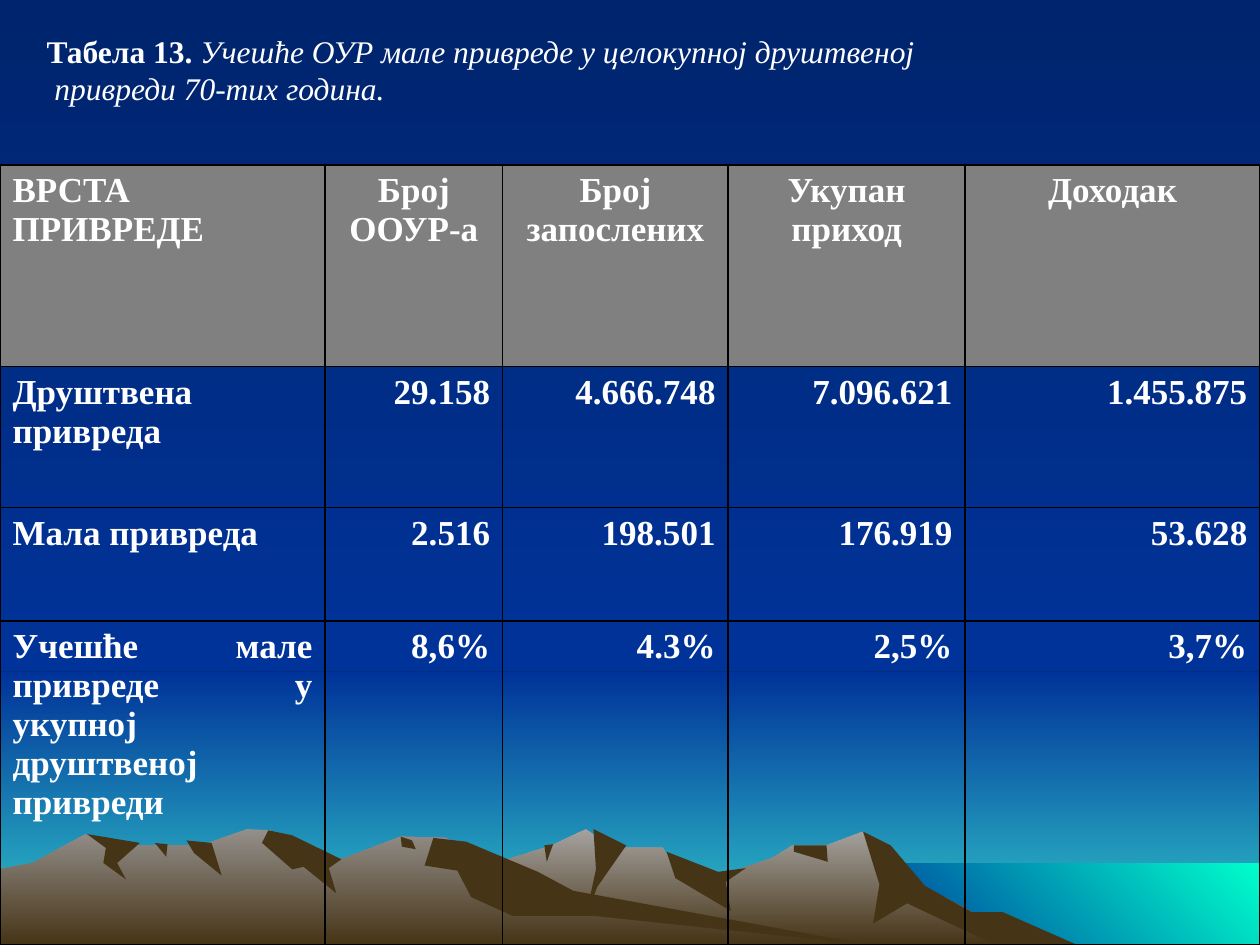
import pptx
import pptx.util
import pptx.oxml
import pptx.oxml.ns
from pptx.dml.color import RGBColor
from pptx.enum.shapes import MSO_SHAPE
from pptx.enum.text import MSO_ANCHOR, MSO_AUTO_SIZE, PP_ALIGN

Inches, Pt = pptx.util.Inches, pptx.util.Pt

FONT = "Times New Roman"
COLORS = {
    "night": "001847", "dusk": "00246D", "blue": "003399", "horizon": "33CCCC",
    "water": "00FFCC", "haze": "A5A29F", "stone": "938F8B", "earth": "463416",
    "text": "FFFFFF", "header": "808080", "border": "000000",
}

# Each paragraph is a list of (text, bold, italic)
TITLE = [
    [("Табела 13. ", True, False),
     ("Учешће ОУР мале привреде у целокупној друштвеној", False, True)],
    [(" привреди 70-тих година.", False, True)],
]
TABLE = [
    ["ВРСТА ПРИВРЕДЕ", "Број ООУР-а", "Број запослених", "Укупан приход", "Доходак"],
    ["Друштвена привреда", "29.158", "4.666.748", "7.096.621", "1.455.875"],
    ["Мала привреда", "2.516", "198.501", "176.919", "53.628"],
    ["Учешће мале привреде у укупној друштвеној привреди", "8,6%", "4.3%", "2,5%", "3,7%"],
]
COL_WIDTHS = [2.58, 1.41, 1.79, 1.88, 2.34]
ROW_HEIGHTS = [1.6, 1.12, 0.9, 2.57]

WIDTH, HEIGHT = 10, 7.5
SKYLINE = 5.33
SHORE = (6.83, 6.85)

# Ridges run left to right and are closed along the bottom of the slide
RIGHT_RIDGE = [
    (2.58, 7.5), (3.27, 7.09), (3.94, 6.85), (4.38, 6.71), (4.65, 6.58), (4.86, 6.73),
    (5.26, 6.73), (5.36, 6.9), (5.66, 6.97), (6.13, 6.81), (6.29, 6.71), (6.56, 6.71),
    (6.85, 6.6), (7.23, 6.98), (8.2, 7.5)]
LEFT_RIDGE = [
    (0, 6.9), (0.26, 6.85), (0.68, 6.62), (0.94, 6.71), (1.6, 6.71), (1.96, 6.58),
    (2.15, 6.59), (2.36, 6.81), (2.71, 6.82), (3.18, 6.64), (3.54, 6.65), (4.32, 7.12),
    (6.9, 7.5)]
RIGHT_SHADOWS = [
    [(6.85, 6.6), (7.07, 6.71), (7.34, 7.03), (7.71, 7.24), (7.96, 7.24), (8.55, 7.5),
     (7.9, 7.5), (7.2, 7.17), (6.93, 7.33), (6.98, 7.02)],
    [(4.71, 6.58), (4.97, 6.71), (4.74, 7.04), (4.65, 7.27), (4.73, 6.9)],
    [(5.29, 6.76), (5.7, 6.92), (5.92, 6.89), (5.76, 7), (5.8, 7.23), (5.36, 6.97)],
    [(6.3, 6.71), (6.56, 6.71), (6.57, 6.84), (6.3, 6.76)],
    [(4.32, 6.71), (4.39, 6.7), (4.34, 6.84)],
]
LEFT_SHADOWS = [
    [(2.13, 6.59), (2.32, 6.63), (2.71, 6.82), (2.61, 6.89), (2.67, 7.09), (2.41, 6.88),
     (2.32, 6.9), (2.08, 6.69)],
    [(3.44, 6.65), (3.7, 6.68), (4.27, 6.92), (4.55, 7.07), (6.9, 7.5), (4.72, 7.27),
     (4.07, 7.27), (3.74, 7.12), (3.63, 6.91), (3.37, 6.87)],
    [(3.18, 6.64), (3.27, 6.67), (3.3, 6.74), (3.19, 6.72)],
    [(1.48, 6.67), (1.68, 6.69), (1.76, 6.95), (1.54, 6.77)],
    [(1.23, 6.69), (1.33, 6.7), (1.32, 6.8)],
    [(0.69, 6.62), (1.11, 6.69), (0.93, 6.85), (1, 6.98), (0.82, 6.85), (0.84, 6.73)],
]


def rgb(name):
    return RGBColor.from_string(COLORS[name])


def fill_with(fill, first, last, angle=270):
    """Fill with a two-stop gradient, or plainly when both colours agree."""
    if first == last:
        fill.solid()
        fill.fore_color.rgb = rgb(first)
        return
    fill.gradient()
    fill.gradient_angle = angle
    for stop, name, position in zip(fill.gradient_stops, (first, last), (0, 1)):
        stop.color.rgb = rgb(name)
        stop.position = position


def style_scenery(sp, first, last, angle=270):
    sp.shadow.inherit = False
    sp.line.fill.background()
    fill_with(sp.fill, first, last, angle)


def add_band(s, left, top, bottom, first, last, angle=270):
    """Add a rectangle that reaches the right edge of the slide."""
    sp = s.shapes.add_shape(
        MSO_SHAPE.RECTANGLE, Inches(left), Inches(top),
        Inches(WIDTH - left), Inches(bottom - top))
    style_scenery(sp, first, last, angle)


def add_outline(s, outline, top_color):
    points = [(Inches(x), Inches(y)) for x, y in outline]
    builder = s.shapes.build_freeform(*points[0])
    builder.add_line_segments(points[1:], close=True)
    style_scenery(builder.convert_to_shape(), top_color, "earth")


def add_scenery(s):
    fill_with(s.background.fill, "night", "blue")
    add_band(s, 0, SKYLINE, HEIGHT, "blue", "horizon")
    add_band(s, 0, 0, SKYLINE, "dusk", "blue")
    add_band(s, *SHORE, HEIGHT, "blue", "water", 45)
    for ridge, color, shadows in ((RIGHT_RIDGE, "haze", RIGHT_SHADOWS),
                                  (LEFT_RIDGE, "stone", LEFT_SHADOWS)):
        base = [(ridge[-1][0], HEIGHT), (ridge[0][0], HEIGHT)]
        add_outline(s, ridge + base, color)
        for shadow in shadows:
            add_outline(s, shadow, "earth")


def style_font(font, size):
    font.name, font.size = FONT, Pt(size)
    font.color.rgb = rgb("text")


def add_title(s):
    title = s.shapes.title
    title.element.getparent().append(title.element)  # bring in front of the sky
    title.left, title.top, title.width, title.height = (
        Inches(v) for v in (0.27, 0.18, 9.14, 1))
    tf = title.text_frame
    tf.word_wrap, tf.auto_size = True, MSO_AUTO_SIZE.NONE
    tf.vertical_anchor, tf.margin_top = MSO_ANCHOR.TOP, Inches(0.07)
    for i, runs in enumerate(TITLE):
        p = tf.add_paragraph() if i else tf.paragraphs[0]
        p.alignment = PP_ALIGN.LEFT
        style_font(p.font, 18)
        for text, bold, italic in runs:
            r = p.add_run()
            r.text, r.font.bold, r.font.italic = text, bold, italic


def add_borders(cell):
    tc_pr = cell._tc.get_or_add_tcPr()
    for side in ("lnL", "lnR", "lnT", "lnB"):
        tc_pr.append(pptx.oxml.parse_xml(
            f'<a:{side} {pptx.oxml.ns.nsdecls("a")} w="{Pt(1)}"><a:solidFill>'
            f'<a:srgbClr val="{COLORS["border"]}"/></a:solidFill></a:{side}>'))


def cell_alignment(row, col):
    if col:
        return PP_ALIGN.RIGHT if row else PP_ALIGN.CENTER
    return PP_ALIGN.JUSTIFY if row == len(TABLE) - 1 else PP_ALIGN.LEFT


def add_economy_table(s):
    table = s.shapes.add_table(
        len(TABLE), len(COL_WIDTHS), 0, Inches(1.31),
        Inches(sum(COL_WIDTHS)), Inches(sum(ROW_HEIGHTS))).table
    table.first_row = table.horz_banding = False
    for column, width in zip(table.columns, COL_WIDTHS):
        column.width = Inches(width)
    for i, (row, height) in enumerate(zip(table.rows, ROW_HEIGHTS)):
        row.height = Inches(height)
        for j, cell in enumerate(row.cells):
            cell.text = TABLE[i][j]
            p = cell.text_frame.paragraphs[0]
            p.alignment = cell_alignment(i, j)
            style_font(p.font, 20)
            p.font.bold = True
            add_borders(cell)
            if i:
                cell.fill.background()
            else:
                fill_with(cell.fill, "header", "header")


def main():
    prs = pptx.Presentation()
    prs.slide_width, prs.slide_height = Inches(WIDTH), Inches(HEIGHT)
    s = prs.slides.add_slide(prs.slide_layouts[5])
    add_scenery(s)
    add_title(s)
    add_economy_table(s)
    prs.save("out.pptx")


if __name__ == "__main__":
    main()
